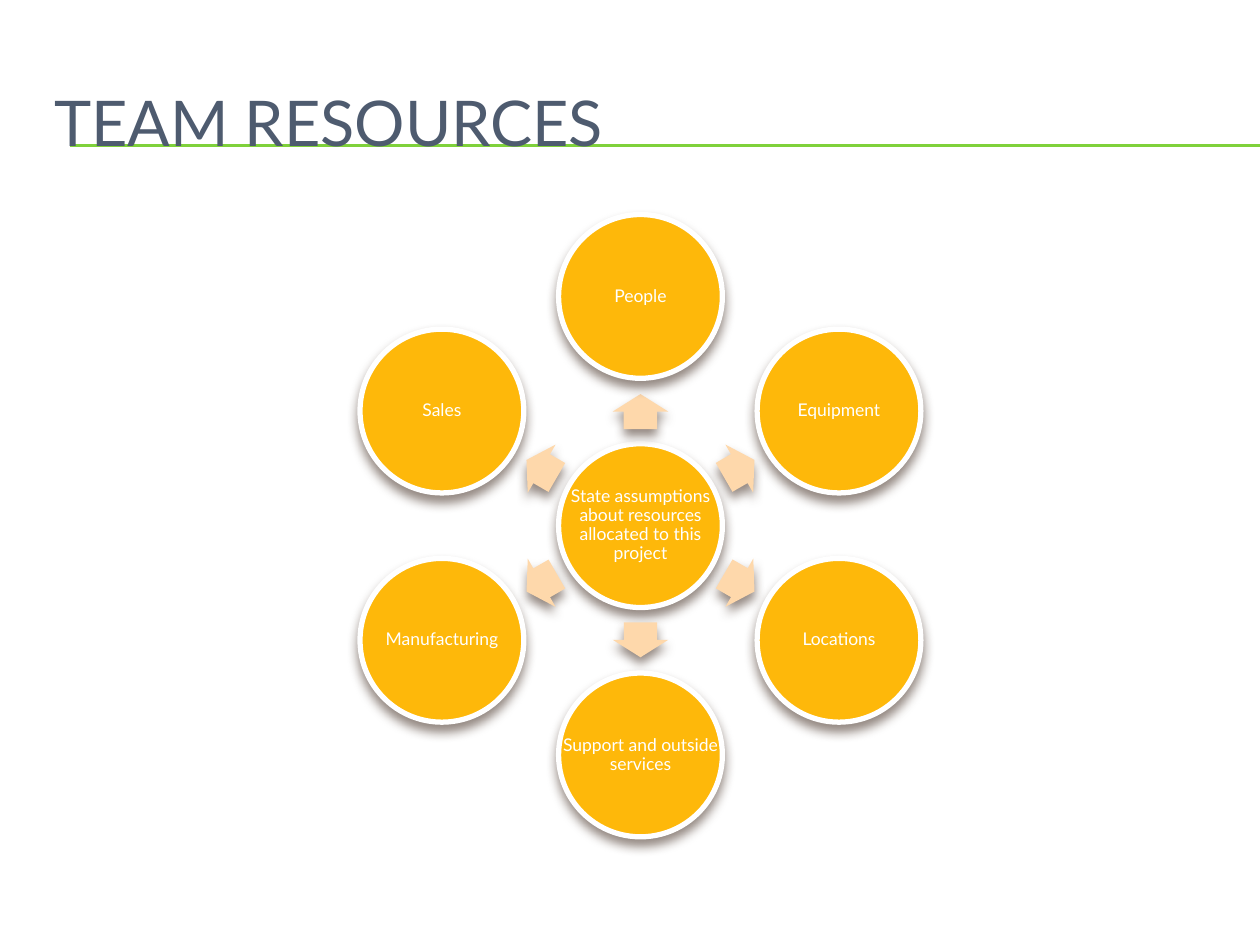
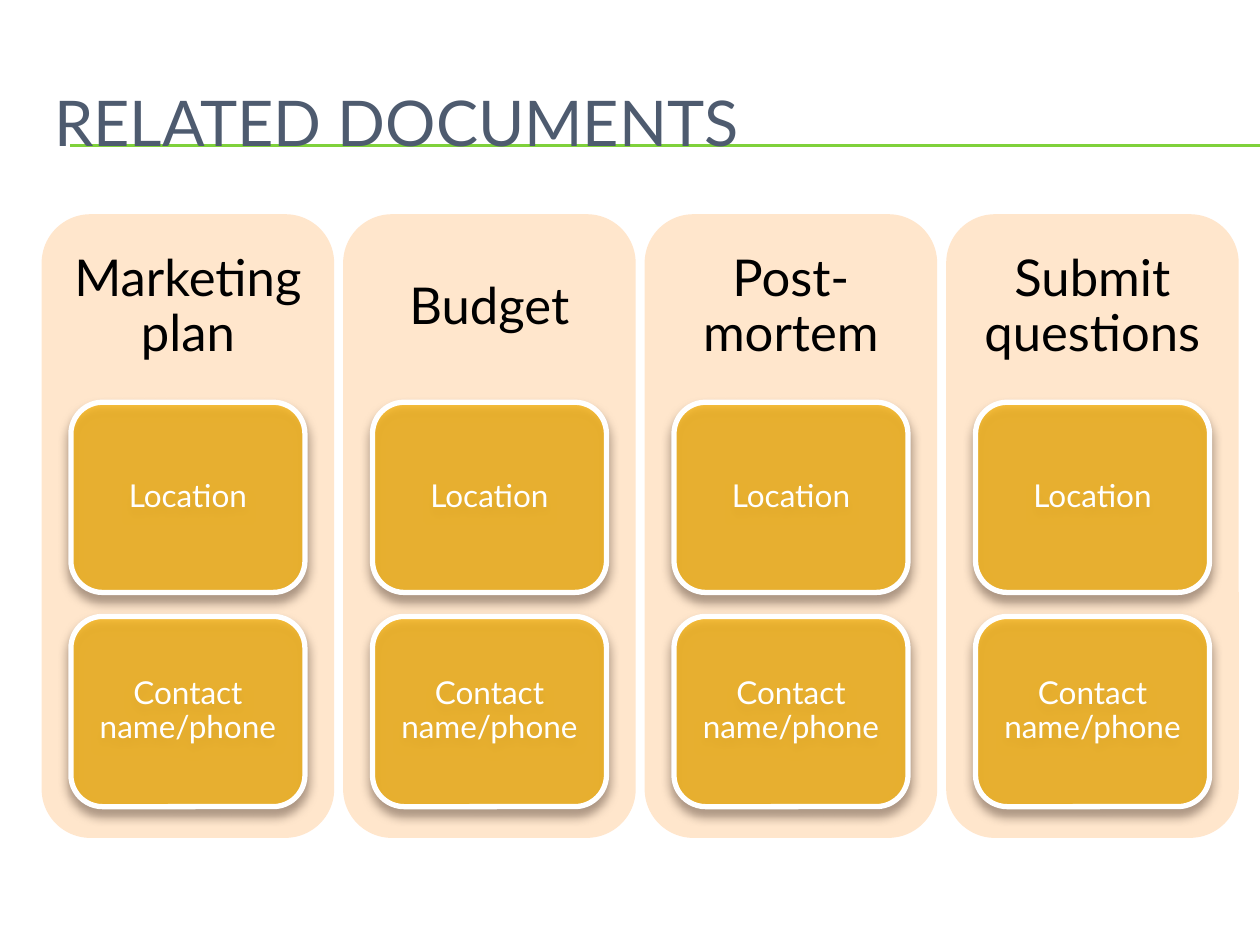
import math

import lxml.etree
import pptx
import pptx.dml.color
import pptx.enum.shapes
import pptx.enum.text
import pptx.oxml.ns
import pptx.util

Pt = pptx.util.Pt
qn = pptx.oxml.ns.qn
SHAPES = pptx.enum.shapes.MSO_SHAPE
ALIGN = pptx.enum.text.PP_ALIGN

SLIDE_WIDTH, SLIDE_HEIGHT = 720, 540
COLOURS = {
    "title": "4E5B6F",
    "rule": "7FD13B",
    "gold": "FEB80A",
    "arrow": "FED8AB",
    "panel": "FFE6CC",
    "shadow": "4E3B30",
    "white": "FFFFFF",
    "black": "000000",
}


def rgb(name):
    return pptx.dml.color.RGBColor.from_string(COLOURS[name])


class Deck:
    font = "Lato"
    border = 3
    shadow = {"blurRad": Pt(6), "dist": Pt(4), "dir": 90 * 60000, "algn": "ctr", "rotWithShape": 0}
    shadow_opacity = 60

    def __init__(self):
        self.presentation = pptx.Presentation()
        self.presentation.slide_width = Pt(SLIDE_WIDTH)
        self.presentation.slide_height = Pt(SLIDE_HEIGHT)
        self.slide = None

    def new_slide(self, title):
        blank = self.presentation.slide_layouts[6]
        self.slide = self.presentation.slides.add_slide(blank)
        for y in (82.8, 83.5):
            self.rule(40.3, y, SLIDE_WIDTH)
        self.label(title, (23.8, 36, 684, 66.2), 36, "title", (7.2, 3.6), align=ALIGN.LEFT, spacing=1)

    def rule(self, left, y, right):
        straight = pptx.enum.shapes.MSO_CONNECTOR.STRAIGHT
        rule = self.slide.shapes.add_connector(straight, Pt(left), Pt(y), Pt(right), Pt(y))
        rule.line.color.rgb = rgb("rule")
        rule.line.width = Pt(0.75)
        lxml.etree.SubElement(rule._element.spPr, qn("a:effectLst"))

    def set_text(self, shape, text, size, colour, inset, align=ALIGN.CENTER, spacing=0.9):
        """Put text in a shape; inset is (horizontal, vertical)."""
        across, down = map(Pt, inset)
        frame = shape.text_frame
        frame_format = {
            "word_wrap": True,
            "vertical_anchor": pptx.enum.text.MSO_ANCHOR.MIDDLE,
            "margin_left": across, "margin_right": across,
            "margin_top": down, "margin_bottom": down,
        }
        for name, value in frame_format.items():
            setattr(frame, name, value)
        paragraph = frame.paragraphs[0]
        for name, value in {"alignment": align, "line_spacing": spacing}.items():
            setattr(paragraph, name, value)
        run = paragraph.add_run()
        run.text = text
        for name, value in {"name": self.font, "size": Pt(size)}.items():
            setattr(run.font, name, value)
        run.font.color.rgb = rgb(colour)

    def label(self, text, box, size, colour, inset, **paragraph_format):
        area = self.slide.shapes.add_textbox(*map(Pt, box))
        self.set_text(area, text, size, colour, inset, **paragraph_format)

    def block(self, preset, box, fill, opacity=100, bordered=False, shaded=False, rotation=0):
        block = self.slide.shapes.add_shape(preset, *map(Pt, box))
        block.rotation = rotation
        block.fill.solid()
        block.fill.fore_color.rgb = rgb(fill)
        if opacity < 100:
            tint = block._element.spPr.find(qn("a:solidFill")).find(qn("a:srgbClr"))
            self.set_opacity(tint, opacity)
        if bordered:
            block.line.color.rgb = rgb("white")
            block.line.width = Pt(self.border)
        else:
            block.line.fill.background()
        block.shadow.inherit = False
        if shaded:
            self.cast_shadow(block)
        return block

    def cast_shadow(self, block):
        effects = block._element.spPr.find(qn("a:effectLst"))
        outer = lxml.etree.SubElement(effects, qn("a:outerShdw"))
        for name, value in self.shadow.items():
            outer.set(name, str(value))
        tint = lxml.etree.SubElement(outer, qn("a:srgbClr"), val=COLOURS["shadow"])
        self.set_opacity(tint, self.shadow_opacity)

    @staticmethod
    def set_opacity(tint, percent):
        lxml.etree.SubElement(tint, qn("a:alpha"), val=str(percent * 1000))

    def circle(self, text, x, y, diameter=93.6):
        box = (x - diameter / 2, y - diameter / 2, diameter, diameter)
        self.block(SHAPES.OVAL, box, "gold", bordered=True, shaded=True)
        self.label(text, box, 10, "white", (0.7, 0.7))

    def arrow(self, x, y, angle, length=20, breadth=31.8):
        box = (x - length / 2, y - breadth / 2, length, breadth)
        arrow = self.block(SHAPES.RIGHT_ARROW, box, "arrow", shaded=True, rotation=angle % 360)
        arrow.adjustments[0] = 0.6
        arrow.adjustments[1] = 0.5

    def card(self, text, box):
        card = self.block(SHAPES.ROUNDED_RECTANGLE, box, "gold", opacity=70, bordered=True, shaded=True)
        self.set_text(card, text, 18, "white", (4.8, 4.8))


def team_resources(deck):
    deck.new_slide("TEAM RESOURCES")
    hub_x, hub_y = 366, 300.4
    ring_radius, arrow_radius = 131, 65.2
    resources = ["People", "Equipment", "Locations", "Support and outside services", "Manufacturing", "Sales"]

    def around(radius, angle):
        turn = math.radians(angle)
        return hub_x + radius * math.cos(turn), hub_y + radius * math.sin(turn)

    deck.circle("State assumptions about resources allocated to this project", hub_x, hub_y)
    for index, resource in enumerate(resources):
        angle = index * 360 / len(resources) - 90
        deck.arrow(*around(arrow_radius, angle), angle)
        deck.circle(resource, *around(ring_radius, angle))


def related_documents(deck):
    deck.new_slide("RELATED DOCUMENTS")
    top, width, height = 122.4, 167.2, 356.4
    first_left, column_step = 23.8, 172.3
    card_width, card_height, card_step = 0.8 * width, 108.7, 122.4
    documents = ["Marketing plan", "Budget", "Post-mortem", "Submit questions"]
    details = ["Location", "Contact name/phone"]

    for column, document in enumerate(documents):
        left = first_left + column * column_step
        deck.block(SHAPES.ROUNDED_RECTANGLE, (left, top, width, height), "panel")
        deck.label(document, (left, top, width, 0.3 * height), 29, "black", (16.5, 16.5))
        for row, detail in enumerate(details):
            card_top = top + 0.3 * height + 0.5 + row * card_step
            deck.card(detail, (left + 0.1 * width, card_top, card_width, card_height))


def main():
    deck = Deck()
    team_resources(deck)
    related_documents(deck)
    deck.presentation.save("out.pptx")


if __name__ == "__main__":
    main()
